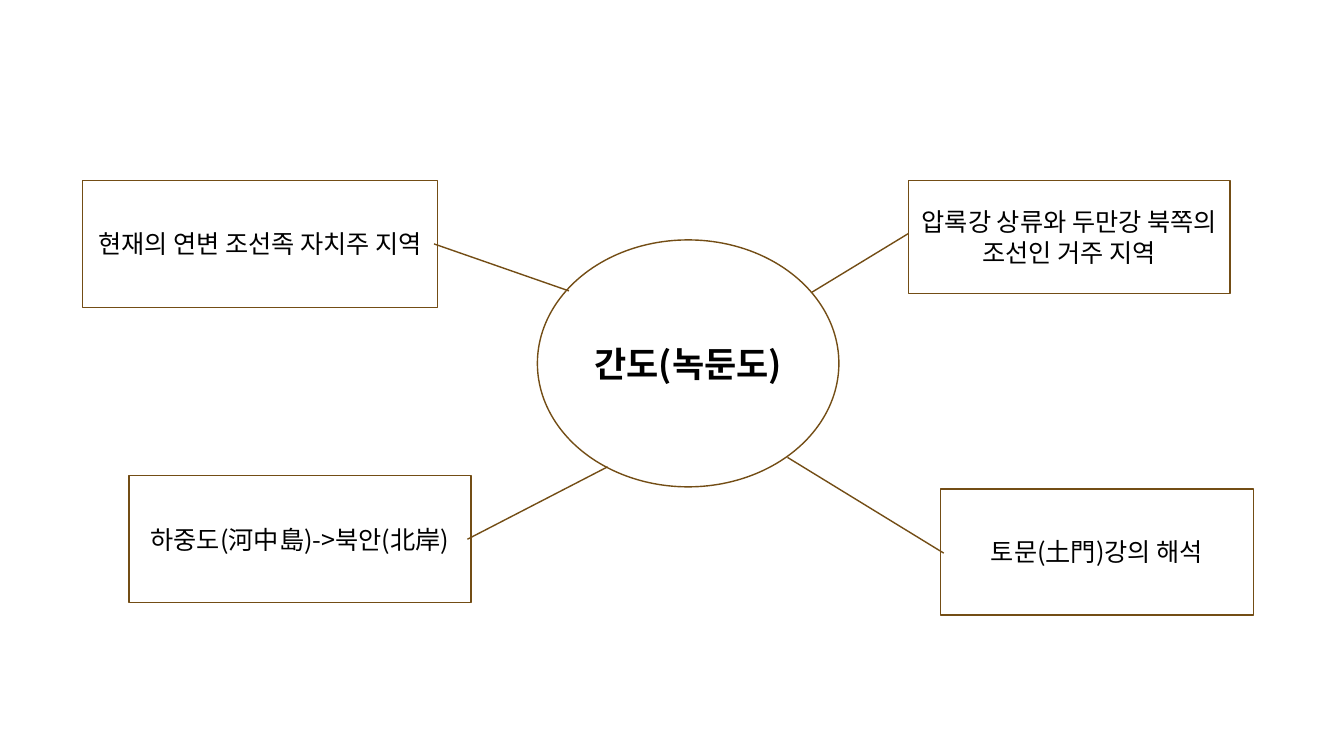
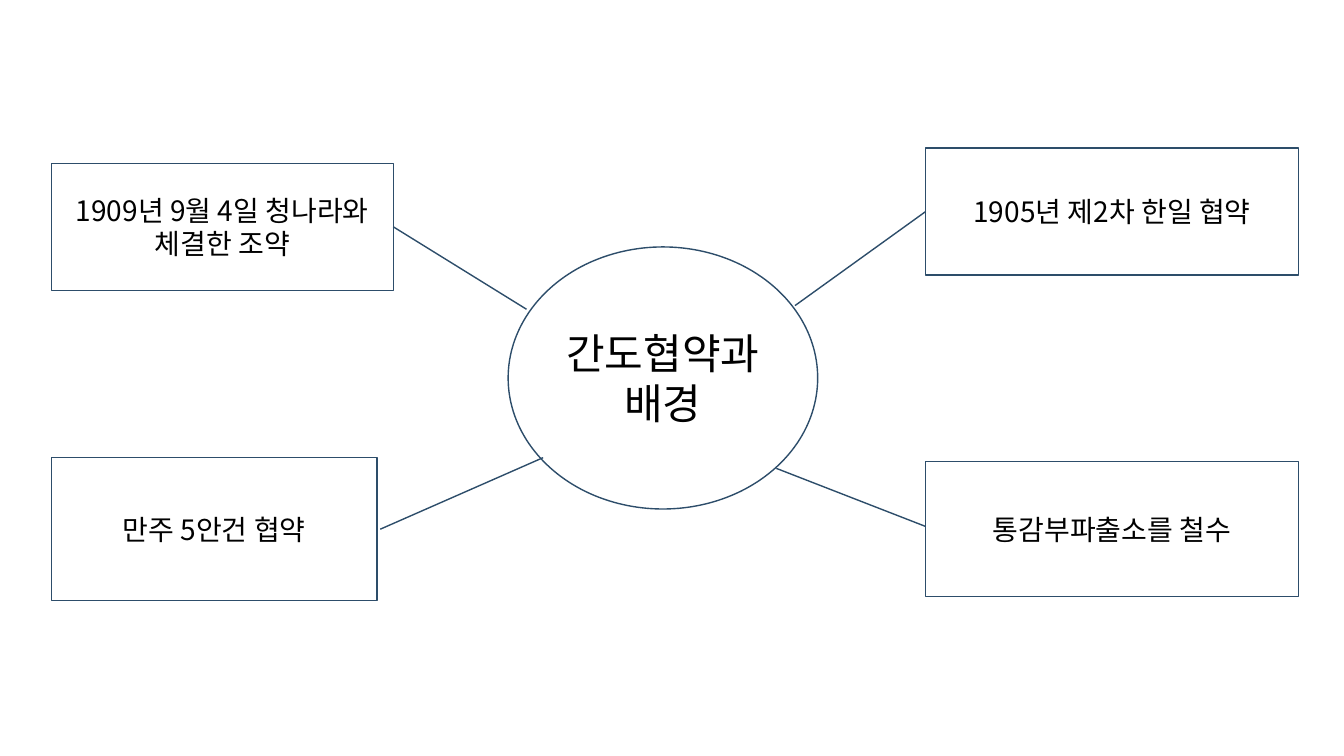
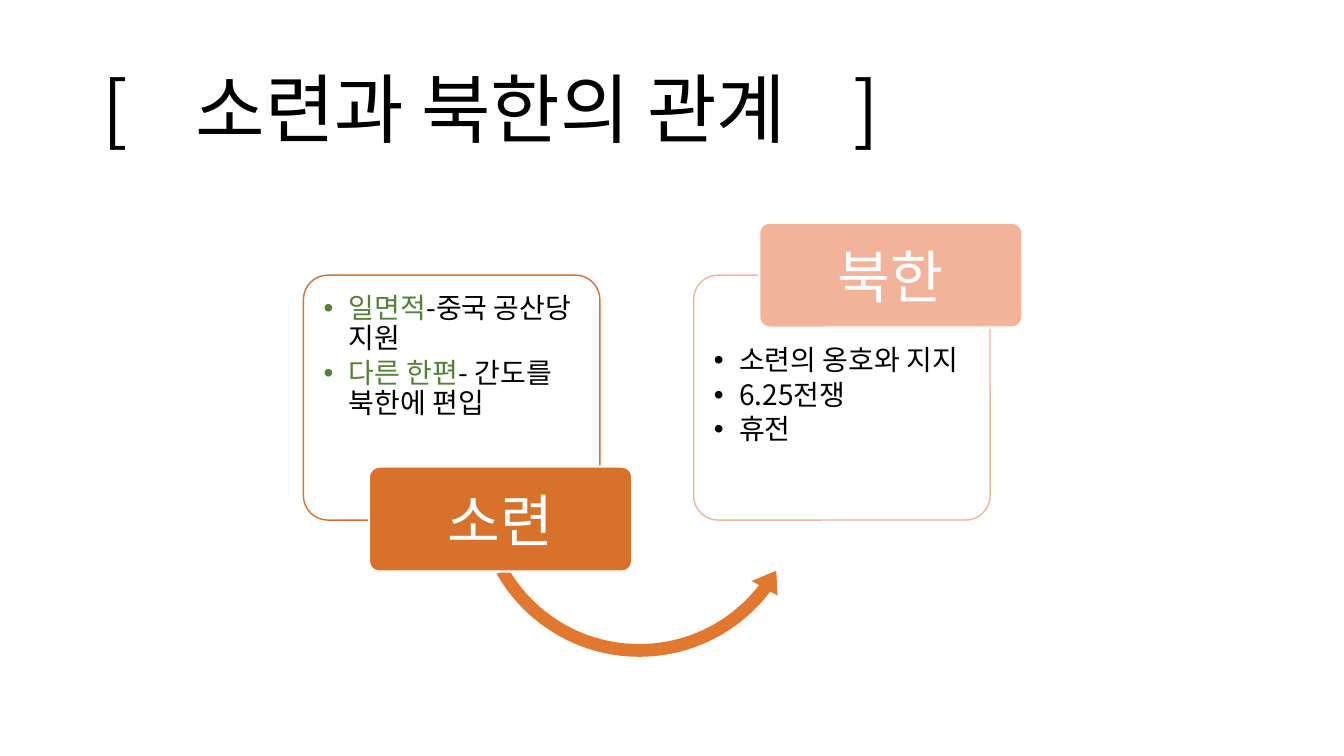
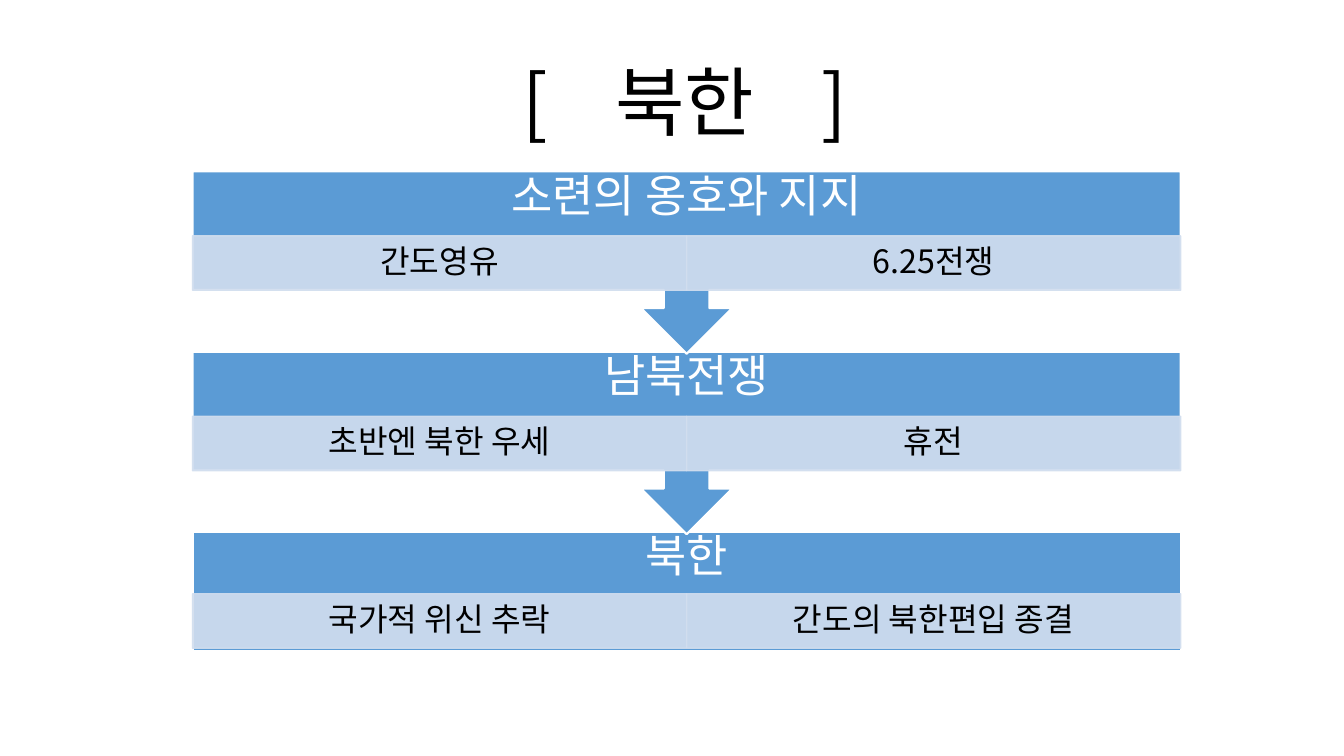
from lxml.etree import SubElement
from pptx import Presentation
from pptx.dml.color import RGBColor
from pptx.enum.shapes import MSO_SHAPE
from pptx.enum.text import MSO_ANCHOR, MSO_AUTO_SIZE, PP_ALIGN
from pptx.oxml.ns import qn
from pptx.util import Inches, Pt

FONT = "Noto Sans CJK KR"
BLACK, WHITE, GREEN = "000000", "FFFFFF", "548235"
BROWN, NAVY = "734D15", "2D4D6A"
ORANGE, SALMON, ARROW_ORANGE = "D7712C", "F3B39B", "E2772F"
BLUE, PALE_BLUE = "5B9BD5", "D2DEEF"
rgb = RGBColor.from_string


def write(paragraph, text, size=20, color=BLACK, bold=False, spacing=0):
    run = paragraph.add_run()
    run.text = text
    run.font.size = Pt(size)
    run.font.bold = bold
    run.font.color.rgb = rgb(color)
    run.font.name = FONT
    properties = run.font._element
    SubElement(properties, qn("a:ea")).set("typeface", FONT)
    if spacing:
        properties.set("spc", str(spacing * 100))


def draw(slide, kind, box, text="", fill=None, line=None, width=1, adjust=(), **text_format):
    shape = slide.shapes.add_shape(kind, *map(Inches, box))
    shape.shadow.inherit = False
    for index, value in enumerate(adjust):
        shape.adjustments[index] = value
    if fill:
        shape.fill.solid()
        shape.fill.fore_color.rgb = rgb(fill)
    else:
        shape.fill.background()
    if line:
        shape.line.color.rgb = rgb(line)
        shape.line.width = Pt(width)
    else:
        shape.line.fill.background()
    if text:
        paragraph = shape.text_frame.paragraphs[0]
        paragraph.alignment = PP_ALIGN.CENTER
        write(paragraph, text, **text_format)
    return shape


prs = Presentation()
prs.slide_width, prs.slide_height = Inches(13.33), Inches(7.5)
TITLE_ONLY, TWO_CONTENT, BLANK = (prs.slide_layouts[i] for i in (5, 3, 6))

mind_maps = [
    {
        "color": BROWN,
        "topic": ("간도(녹둔도)", (5.33, 2.38, 2.99, 2.45), 25, True),
        "note_size": 18,
        "notes": [
            ("압록강 상류와 두만강 북쪽의 조선인 거주 지역", (9.01, 1.79, 3.19, 1.12), (0.47, 0, 0.99, -0.3)),
            ("현재의 연변 조선족 자치주 지역", (0.82, 1.79, 3.52, 1.26), (0.5, 0.99, 0.87, 1.37)),
            ("하중도(河中島)->북안(北岸)", (1.28, 4.72, 3.39, 1.26), (0.5, 0.99, -0.07, 1.4)),
            ("토문(土門)강의 해석", (9.33, 4.85, 3.1, 1.25), (0.51, 0.01, -0.25, -0.49)),
        ],
    },
    {
        "color": NAVY,
        "topic": ("간도협약과 배경", (5.04, 2.45, 3.07, 2.6), 30, False),
        "note_size": 20,
        "notes": [
            ("1905년 제2차 한일 협약", (9.18, 1.47, 3.7, 1.26), (0.5, 0, 1.24, -0.35)),
            ("1909년 9월 4일 청나라와 체결한 조약", (0.51, 1.62, 3.39, 1.26), (0.5, 1, 1.15, 1.39)),
            ("만주 5안건 협약", (0.51, 4.54, 3.23, 1.42), (0.5, 1.01, 0, 1.51)),
            ("통감부파출소를 철수", (9.18, 4.58, 3.7, 1.34), (0.48, 0, 0.05, -0.4)),
        ],
    },
]
for mind_map in mind_maps:
    slide = prs.slides.add_slide(BLANK)
    topic, topic_box, topic_size, topic_bold = mind_map["topic"]
    draw(slide, MSO_SHAPE.OVAL, topic_box, topic, line=mind_map["color"],
         size=topic_size, bold=topic_bold)
    for note, note_box, pointer in mind_map["notes"]:
        draw(slide, MSO_SHAPE.LINE_CALLOUT_1, note_box, note, line=mind_map["color"],
             adjust=pointer, size=mind_map["note_size"])

relations = prs.slides.add_slide(TWO_CONTENT)
north_korea = prs.slides.add_slide(TITLE_ONLY)
headings = [
    (relations, "소련과 북한의 관계", (0.92, 0.4, 11.5, 1.45), PP_ALIGN.LEFT, MSO_ANCHOR.MIDDLE),
    (north_korea, "북한", (0.79, 0.6, 12, 0.94), PP_ALIGN.CENTER, MSO_ANCHOR.TOP),
]
for slide, heading, box, alignment, anchor in headings:
    title = slide.shapes.title
    title.left, title.top, title.width, title.height = map(Inches, box)
    title.text_frame.auto_size = MSO_AUTO_SIZE.NONE
    title.text_frame.vertical_anchor = anchor
    paragraph = title.text_frame.paragraphs[0]
    paragraph.alignment = alignment
    paragraph.line_spacing = 0.9
    for part, spacing in (("[", 0), (" ", 36), (heading, 0), (" ", 36), ("]", 0)):
        write(paragraph, part, size=54, spacing=spacing)

draw(relations, MSO_SHAPE.LEFT_CIRCULAR_ARROW, (4.63, 3.18, 3.42, 3.42), fill=ARROW_ORANGE,
     adjust=(0.037, 4.586, 22.341, 90.245, 0.043))
countries = [
    ("소련", ORANGE, 3.01, 4.63, 2.78, [
        [("일면적", GREEN), ("-중국 공산당 지원", BLACK)],
        [("다른 한편", GREEN), ("- 간도를 북한에 편입", BLACK)],
    ]),
    ("북한", SALMON, 6.88, 2.21, 3.3, [
        [("소련의 옹호와 지지", BLACK)],
        [("6.25전쟁", BLACK)],
        [("휴전", BLACK)],
    ]),
]
for index, (country, color, left, label_top, list_top, points) in enumerate(countries, start=1):
    draw(relations, MSO_SHAPE.ROUNDED_RECTANGLE, (left, 2.73, 2.94, 2.43), line=color, adjust=(0.1,))
    draw(relations, MSO_SHAPE.ROUNDED_RECTANGLE, (left + 0.65, label_top, 2.61, 1.04), country,
         fill=color, line=WHITE, width=1.5, adjust=(0.1,), size=41, color=WHITE)
    body = relations.placeholders[index]
    body.left, body.top, body.width, body.height = map(Inches, (left + 0.06, list_top, 2.83, 1.79))
    frame = body.text_frame
    frame.auto_size = MSO_AUTO_SIZE.NONE
    frame.margin_left = frame.margin_right = frame.margin_top = frame.margin_bottom = Inches(0.14)
    for number, point in enumerate(points):
        paragraph = frame.add_paragraph() if number else frame.paragraphs[0]
        paragraph.line_spacing = 0.9
        paragraph.space_before = Pt(0)
        paragraph.space_after = Pt(3)
        properties = paragraph._p.get_or_add_pPr()
        properties.set("marL", str(Inches(0.25)))
        properties.set("indent", str(-Inches(0.25)))
        for part, part_color in point:
            write(paragraph, part, color=part_color)

STAGE_LEFT, STAGE_TOP, STAGE_PITCH, STAGE_WIDTH = 1.91, 1.7, 1.79, 9.8
CELL_WIDTH = STAGE_WIDTH / 2
stages = [
    ("소련의 옹호와 지지", ("간도영유", "6.25전쟁")),
    ("남북전쟁", ("초반엔 북한 우세", "휴전")),
    ("북한", ("국가적 위신 추락", "간도의 북한편입 종결")),
]
for row, (stage, details) in reversed(list(enumerate(stages))):
    top = STAGE_TOP + row * STAGE_PITCH
    is_last = row == len(stages) - 1
    kind = MSO_SHAPE.RECTANGLE if is_last else MSO_SHAPE.DOWN_ARROW_CALLOUT
    block = draw(north_korea, kind, (STAGE_LEFT, top, STAGE_WIDTH, 1.18 if is_last else 1.81), stage,
                 fill=BLUE, line=WHITE, width=1.5, size=32, color=WHITE)
    block.text_frame.vertical_anchor = MSO_ANCHOR.TOP
    block.text_frame.margin_top = Inches(0.02)
    block.text_frame.paragraphs[0].line_spacing = 0.9
    for column, detail in enumerate(details):
        cell = draw(north_korea, MSO_SHAPE.RECTANGLE,
                    (STAGE_LEFT + column * CELL_WIDTH, top + (0.61 if is_last else 0.64), CELL_WIDTH, 0.54),
                    detail, fill=PALE_BLUE, line=PALE_BLUE, size=23)
        cell.text_frame.margin_top = cell.text_frame.margin_bottom = Inches(0.03)
        cell.text_frame.paragraphs[0].line_spacing = 0.9
        for tint in cell._element.spPr.iter(qn("a:srgbClr")):
            SubElement(tint, qn("a:alpha")).set("val", "90000")

prs.save("out.pptx")
